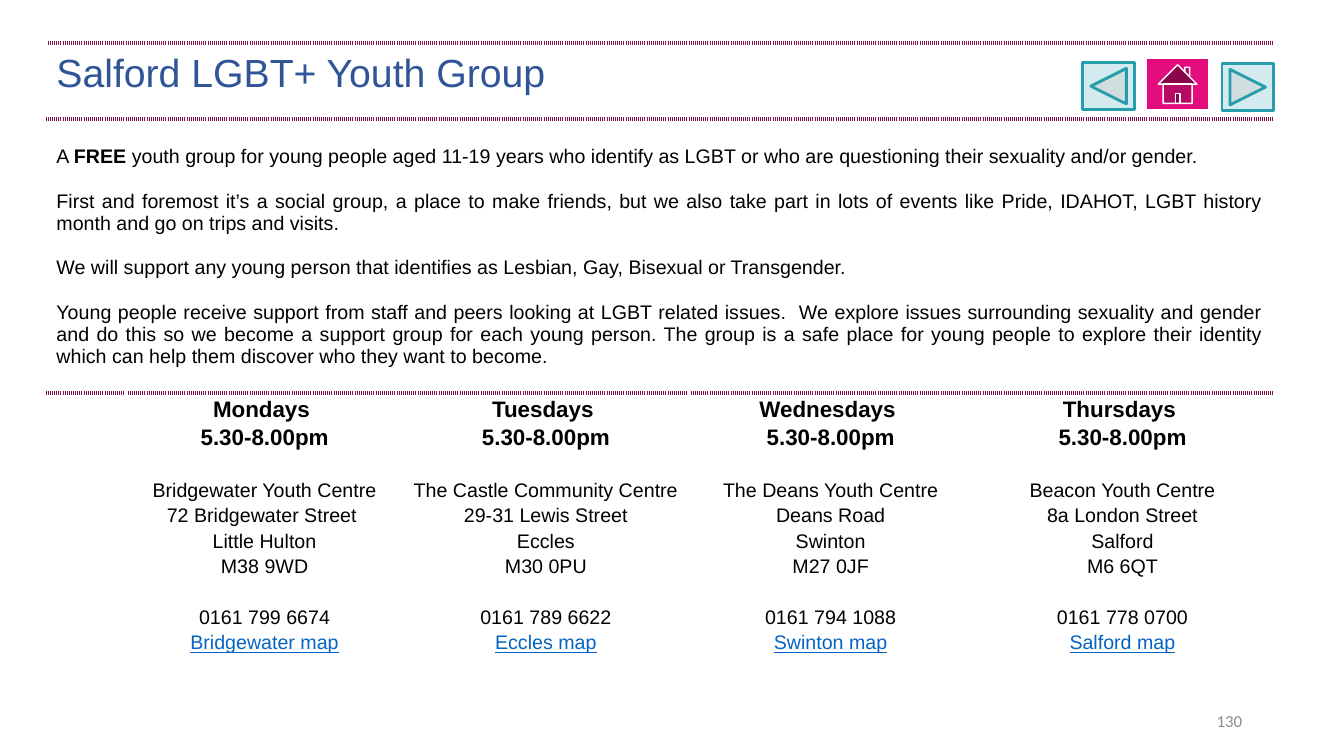
from lxml import etree
from pptx import Presentation
from pptx import util as u
from pptx.dml.color import RGBColor
from pptx.enum import shapes, text
from pptx.oxml.ns import qn

WIDTH, HEIGHT = u.Inches(13.33), u.Inches(7.5)
LEFT, TOP = 3.45, 5.73
COLUMNS = [6, 20.48, 21.38, 21, 22.43]
ROWS = [10, 36.27, 43.2]
PLUM, TEAL, PINK = "85124A", "259DAC", "E40D7E"
BLACK, BLUE, LINK, GREY, WHITE = "000000", "2F5597", "0563C1", "8C8C8C", "FFFFFF"

INTRO = [
    [("A ", False), ("FREE", True),
     (" youth group for young people aged 11-19 years who identify as LGBT or who are "
      "questioning their sexuality and/or gender. ", False)],
    [("First and foremost it’s a social group, a place to make friends, but we also take part in "
      "lots of events like Pride, IDAHOT, LGBT history month and go on trips and visits. ", False)],
    [("We will support any young person that identifies as Lesbian, Gay, Bisexual or "
      "Transgender. ", False)],
    [("Young people receive support from staff and peers looking at LGBT related issues.  We "
      "explore issues surrounding sexuality and gender and do this so we become a support group "
      "for each young person. The group is a safe place for young people to explore their "
      "identity which can help them discover who they want to become. ", False)],
]
HOURS = "5.30-8.00pm"
SESSIONS = [
    ("Mondays ", ["Bridgewater Youth Centre", "72 Bridgewater Street ", "Little Hulton", "M38 9WD"],
     "0161 799 6674", "Bridgewater map"),
    ("Tuesdays ", ["The Castle Community Centre", "29-31 Lewis Street", "Eccles", "M30 0PU"],
     "0161 789 6622", "Eccles map"),
    ("Wednesdays ", ["The Deans Youth Centre", "Deans Road", "Swinton", "M27 0JF"],
     "0161 794 1088", "Swinton map"),
    ("Thursdays ", ["Beacon Youth Centre", "8a London Street", "Salford", "M6 6QT"],
     "0161 778 0700", "Salford map"),
]
BUTTONS = [
    (shapes.MSO_SHAPE.ACTION_BUTTON_HOME, (85.3, 7.73, 4.65, 6.8), PINK, 100, WHITE, 1),
    (shapes.MSO_SHAPE.ACTION_BUTTON_FORWARD_OR_NEXT, (90.92, 8.4, 3.83, 6.27), TEAL, 20, TEAL, 2),
    (shapes.MSO_SHAPE.ACTION_BUTTON_BACK_OR_PREVIOUS, (80.57, 8.27, 3.83, 6.27), TEAL, 20, TEAL, 2),
]


def colour(hex_code):
    return RGBColor.from_string(hex_code)


def across(percent):
    return int(WIDTH * percent / 100)


def down(percent):
    return int(HEIGHT * percent / 100)


def area(left, top, width, height):
    return across(left), down(top), across(width), down(height)


def add_run(paragraph, words, size=14, ink=BLACK, bold=False, underline=False, face="Arial"):
    run = paragraph.add_run()
    run.text = words
    font = run.font
    font.name, font.size, font.bold = face, u.Pt(size), bold
    font.underline = underline
    font.color.rgb = colour(ink)


def next_paragraph(frame, align, before=0, spacing=1.0):
    first = frame.paragraphs[0]
    paragraph = frame.add_paragraph() if first.runs else first
    paragraph.alignment = align
    paragraph.space_before = u.Pt(before)
    paragraph.line_spacing = spacing
    return paragraph


def add_rule(cell, side):
    properties = cell._tc.get_or_add_tcPr()
    rule = etree.Element(qn(f"a:ln{side}"), w=str(u.Pt(3)))
    fill = etree.SubElement(rule, qn("a:solidFill"))
    etree.SubElement(fill, qn("a:srgbClr"), val=PLUM)
    etree.SubElement(rule, qn("a:prstDash"), val="sysDot")
    properties.insert(0, rule)


def add_title(slide):
    title = slide.shapes.title
    title.left, title.top, title.width, title.height = area(LEFT, TOP, 76, ROWS[0])
    frame = title.text_frame
    frame.word_wrap = True
    frame.auto_size = text.MSO_AUTO_SIZE.NONE
    frame.vertical_anchor = text.MSO_ANCHOR.TOP
    add_run(next_paragraph(frame, text.PP_ALIGN.LEFT), "Salford LGBT+ Youth Group", 28, BLUE)


def fill_intro(cell):
    cell.margin_top = u.Inches(0.27)
    for number, pieces in enumerate(INTRO):
        paragraph = next_paragraph(cell.text_frame, text.PP_ALIGN.JUSTIFY, 16 if number else 0)
        for words, bold in pieces:
            add_run(paragraph, words, bold=bold)


def fill_session(cell, day, address, phone, map_label):
    cell.margin_left = cell.margin_right = u.Inches(0.07)
    cell.margin_top = cell.margin_bottom = 0

    def line(words, before=0, **style):
        paragraph = next_paragraph(cell.text_frame, text.PP_ALIGN.CENTER, before, 1.15)
        add_run(paragraph, words, **style)

    line(day, size=16, bold=True)
    line(HOURS, size=16, bold=True)
    for number, words in enumerate(address):
        line(words, 0 if number else 18.5)
    line(phone, 18.5)
    line(map_label, ink=LINK, underline=True)


def add_timetable(slide):
    place = area(LEFT, TOP, sum(COLUMNS), sum(ROWS))
    table = slide.shapes.add_table(len(ROWS), len(COLUMNS), *place).table
    table.first_row = table.horz_banding = False
    for column, share in zip(table.columns, COLUMNS):
        column.width = across(share)
    for row, share in zip(table.rows, ROWS):
        row.height = down(share)
    for cell in table.iter_cells():
        cell.fill.background()
    for index in range(len(COLUMNS)):
        add_rule(table.cell(0, index), "B")
        add_rule(table.cell(0, index), "T")
        add_rule(table.cell(1, index), "T")
    for index in (0, 1):
        table.cell(index, 0).merge(table.cell(index, len(COLUMNS) - 1))
    fill_intro(table.cell(1, 0))
    for index, session in enumerate(SESSIONS, 1):
        fill_session(table.cell(2, index), *session)


def add_page_number(slide):
    frame = slide.shapes.add_textbox(*area(70.67, 92.67, 22.5, 5.33)).text_frame
    frame.word_wrap = True
    frame.vertical_anchor = text.MSO_ANCHOR.MIDDLE
    add_run(next_paragraph(frame, text.PP_ALIGN.RIGHT), "130", 12, GREY, face="Calibri")


def add_button(slide, kind, place, fill, opacity, outline, weight):
    button = slide.shapes.add_shape(kind, *area(*place))
    button.shadow.inherit = False
    button.fill.solid()
    button.fill.fore_color.rgb = colour(fill)
    button.line.color.rgb = colour(outline)
    button.line.width = u.Pt(weight)
    if opacity < 100:
        tint = button._element.spPr.find(qn("a:solidFill")).find(qn("a:srgbClr"))
        etree.SubElement(tint, qn("a:alpha"), val=str(opacity * 1000))


def main():
    deck = Presentation()
    deck.slide_width, deck.slide_height = WIDTH, HEIGHT
    slide = deck.slides.add_slide(deck.slide_layouts[5])
    add_title(slide)
    add_timetable(slide)
    add_page_number(slide)
    for button in BUTTONS:
        add_button(slide, *button)
    deck.save("out.pptx")


if __name__ == "__main__":
    main()
